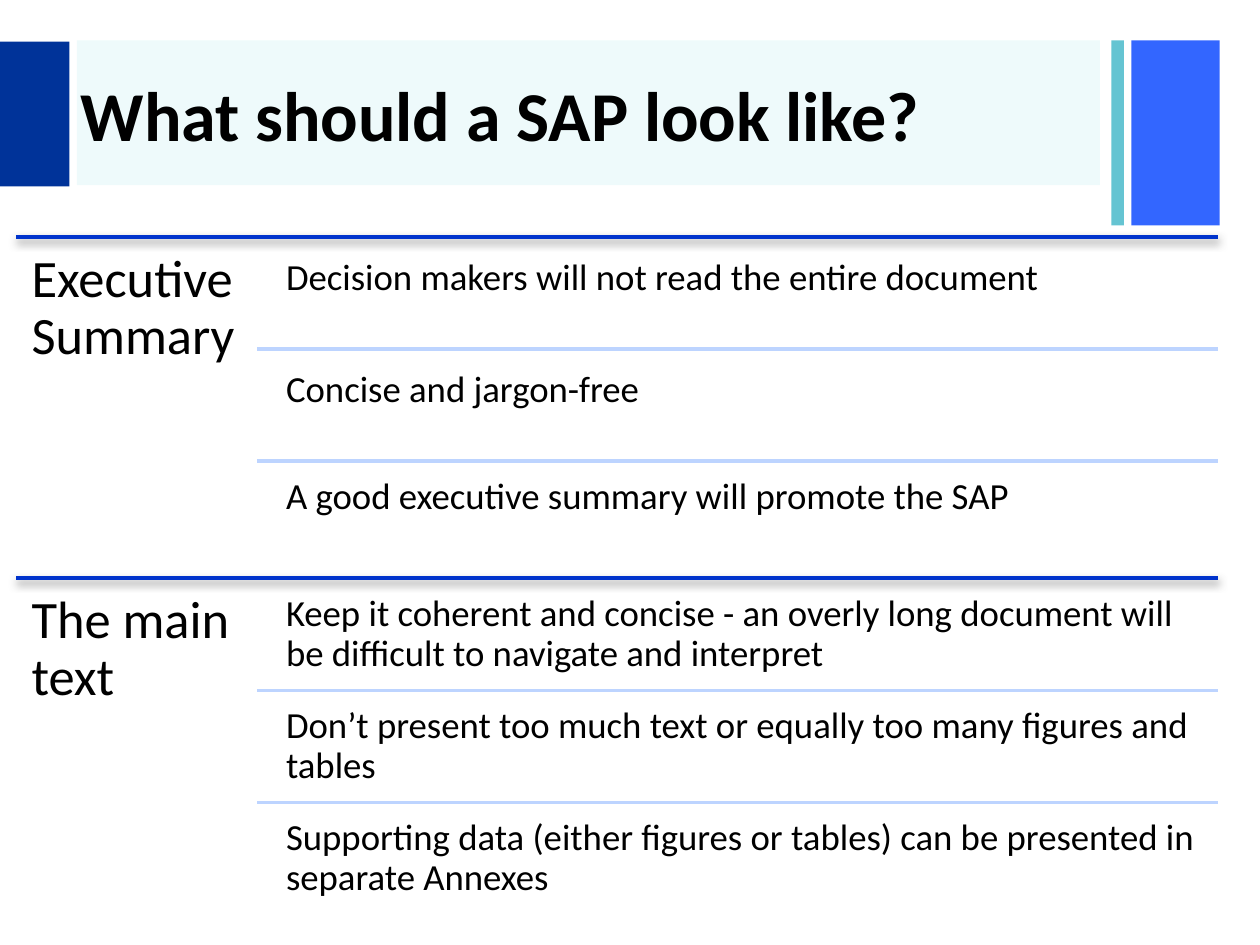
from lxml import etree
from pptx import Presentation
from pptx.dml.color import RGBColor
from pptx.enum import shapes, text
from pptx.oxml import ns
from pptx.util import Inches, Pt

NAVY = RGBColor(0x00, 0x33, 0x99)
BLUE = RGBColor(0x33, 0x66, 0xFF)
TEAL = RGBColor(0x65, 0xC4, 0xD2)
AQUA = RGBColor(0x14, 0xC5, 0xD0)
SECTION_RULE = RGBColor(0x00, 0x33, 0xCC)
ROW_RULE = RGBColor(0xBD, 0xD4, 0xFF)
BLACK = RGBColor(0x00, 0x00, 0x00)
GREY = RGBColor(0x80, 0x80, 0x80)

LEFT, DIVIDER, ROW_LEFT, RIGHT = 0.13, 2.04, 2.18, 9.67
TOP, SECTION_PITCH, ROW_PITCH, ROW_GAP = 1.88, 2.71, 0.89, 0.04

SECTIONS = [
    ("Executive Summary", [
        ("Decision makers will not read the entire document", 1.0),
        ("Concise and jargon-free", 1.0),
        ("A good executive summary will promote the SAP", 0.9),
    ]),
    ("The main text", [
        ("Keep it coherent and concise - an overly long document will "
         "be difficult to navigate and interpret", 0.9),
        ("Don’t present too much text or equally too many figures and tables", 0.9),
        ("Supporting data (either figures or tables) can be presented in "
         "separate Annexes", 0.9),
    ]),
]


class Deck:
    """Holds the text style and the current slide."""

    def __init__(self, slide, font="Calibri", ink=BLACK):
        self.slide, self.font, self.ink = slide, font, ink

    def add_text(self, frame, wording, size, bold=False, spacing=1.0):
        paragraph = frame.paragraphs[0]
        paragraph.alignment = text.PP_ALIGN.LEFT
        paragraph.line_spacing = spacing
        run = paragraph.add_run()
        run.text = wording
        run.font.name, run.font.size, run.font.bold = self.font, Pt(size), bold
        run.font.color.rgb = self.ink

    def title(self, wording, left, top, width, height):
        heading = self.slide.shapes.title
        heading.left, heading.top = Inches(left), Inches(top)
        heading.width, heading.height = Inches(width), Inches(height)
        frame = heading.text_frame
        frame.auto_size = text.MSO_AUTO_SIZE.NONE
        frame.vertical_anchor = text.MSO_ANCHOR.MIDDLE
        self.add_text(frame, wording, 40, bold=True)
        heading.element.getparent().append(heading.element)

    def block(self, left, top, width, height, color, opacity=100):
        block = self.slide.shapes.add_shape(
            shapes.MSO_SHAPE.RECTANGLE,
            Inches(left), Inches(top), Inches(width), Inches(height))
        block.shadow.inherit = False
        block.fill.solid()
        block.fill.fore_color.rgb = color
        block.line.fill.background()
        if opacity < 100:
            tint = block.element.spPr.find(".//" + ns.qn("a:srgbClr"))
            etree.SubElement(tint, ns.qn("a:alpha"), val=str(opacity * 1000))

    def label(self, wording, left, top, width, height, size, inset, spacing):
        box = self.slide.shapes.add_textbox(
            Inches(left), Inches(top), Inches(width), Inches(height))
        frame = box.text_frame
        frame.word_wrap = True
        frame.margin_left = frame.margin_right = Inches(inset)
        frame.margin_top = frame.margin_bottom = Inches(inset)
        self.add_text(frame, wording, size, spacing=spacing)

    def rule(self, left, y, color, weight, shadow=False):
        rule = self.slide.shapes.add_connector(
            shapes.MSO_CONNECTOR.STRAIGHT,
            Inches(left), Inches(y), Inches(RIGHT), Inches(y))
        rule.line.color.rgb, rule.line.width = color, Pt(weight)
        effects = etree.SubElement(rule.element.spPr, ns.qn("a:effectLst"))
        if shadow:
            outer = etree.SubElement(
                effects, ns.qn("a:outerShdw"), blurRad=str(int(Pt(5))),
                dist=str(int(Pt(2))), dir="5400000", rotWithShape="0")
            shade = etree.SubElement(outer, ns.qn("a:srgbClr"), val=str(GREY))
            etree.SubElement(shade, ns.qn("a:alpha"), val="75000")

    def section(self, heading, rows, top):
        self.rule(LEFT, top, SECTION_RULE, 2.25, shadow=True)
        self.label(heading, LEFT, top, DIVIDER - LEFT, 2.72, 30, 0.12, 0.9)
        for index, (wording, spacing) in enumerate(rows):
            row_top = top + index * ROW_PITCH
            if index:
                self.rule(DIVIDER, row_top, ROW_RULE, 2)
            self.label(wording, ROW_LEFT, row_top + ROW_GAP, RIGHT - ROW_LEFT,
                       ROW_PITCH - ROW_GAP, 21, 0.09, spacing)


def main():
    presentation = Presentation()
    presentation.slide_width, presentation.slide_height = Inches(10), Inches(7.5)
    deck = Deck(presentation.slides.add_slide(presentation.slide_layouts[5]))
    deck.block(8.98, 0.32, 0.7, 1.47, BLUE)
    deck.block(8.82, 0.32, 0.1, 1.47, TEAL)
    deck.block(0.61, 0.32, 8.12, 1.15, AQUA, opacity=7)
    deck.block(0, 0.33, 0.55, 1.15, NAVY)
    deck.title("What should a SAP look like?", 0.54, 0.34, 8.27, 1.12)
    for index, (heading, rows) in enumerate(SECTIONS):
        deck.section(heading, rows, TOP + index * SECTION_PITCH)
    presentation.save("out.pptx")


if __name__ == "__main__":
    main()
